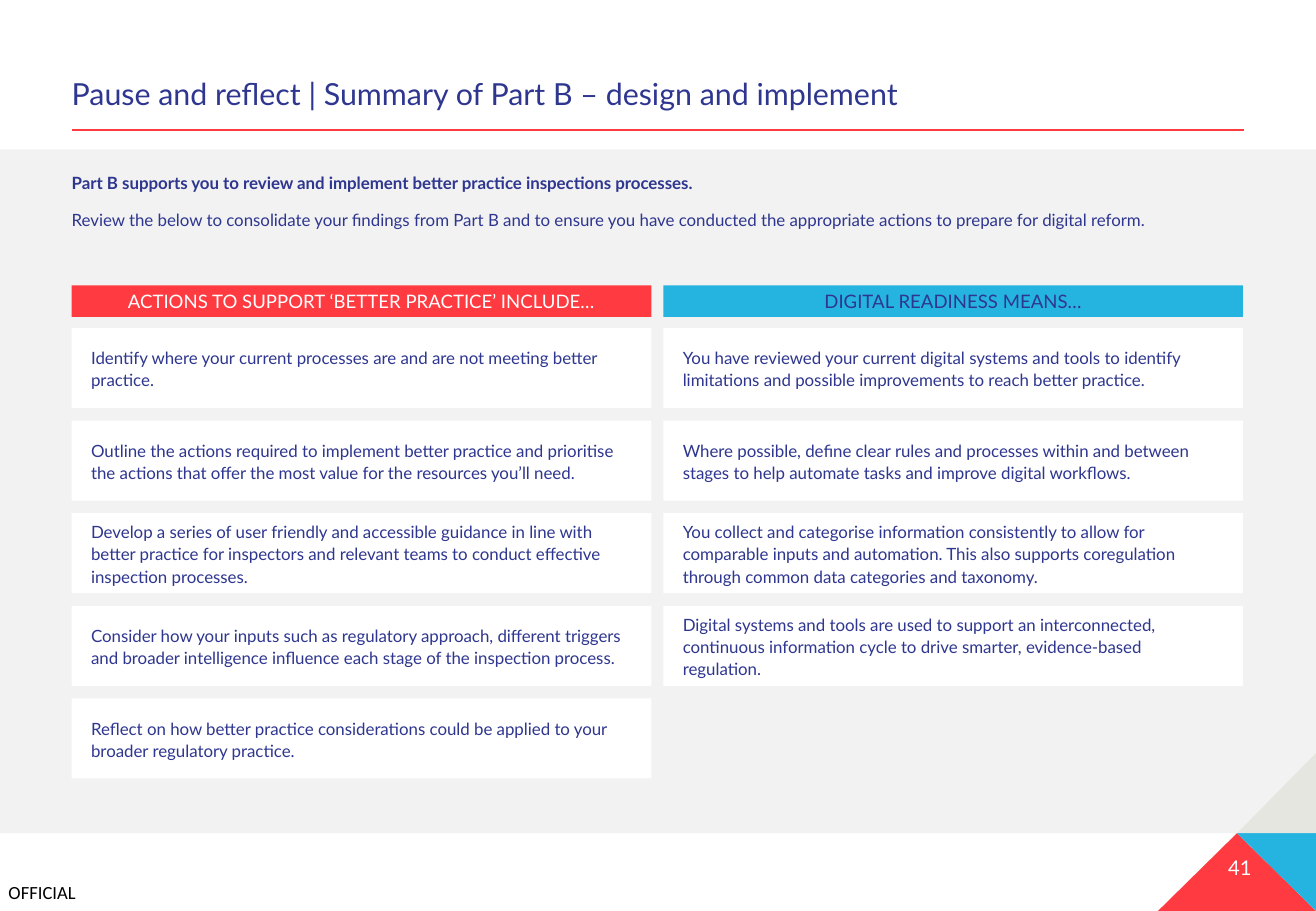
from lxml import etree
from pptx import Presentation
from pptx.dml.color import RGBColor
from pptx.enum.shapes import MSO_CONNECTOR, MSO_SHAPE
from pptx.enum.text import MSO_ANCHOR, PP_ALIGN
from pptx.oxml.ns import qn
from pptx.util import Inches, Pt

RECT = MSO_SHAPE.RECTANGLE
STRAIGHT = MSO_CONNECTOR.STRAIGHT
TOP, MIDDLE, BOTTOM = MSO_ANCHOR.TOP, MSO_ANCHOR.MIDDLE, MSO_ANCHOR.BOTTOM
LEFT, CENTER, RIGHT = PP_ALIGN.LEFT, PP_ALIGN.CENTER, PP_ALIGN.RIGHT
NAVY, RED, BLUE = "2E368F", "FF3A40", "25B3E0"
WHITE, GREY, STONE, BLACK = "FFFFFF", "F2F2F2", "E6E6E1", "000000"


def paint(sp, color):
    sp.shadow.inherit = False
    sp.fill.solid()
    sp.fill.fore_color.rgb = RGBColor.from_string(color)
    sp.line.fill.background()


def write(sp, lines, size, color=NAVY, font="Lato", align=LEFT, anchor=TOP,
          inset=(0, 0.05), spacing=1.0):
    """Fill a shape with paragraphs given as (text, bold) pairs."""
    tf = sp.text_frame
    tf.word_wrap = True
    tf.vertical_anchor = anchor
    tf.margin_left = tf.margin_right = Inches(inset[0])
    tf.margin_top = tf.margin_bottom = Inches(inset[1])
    for i, (text, bold) in enumerate(lines):
        p = tf.add_paragraph() if i else tf.paragraphs[0]
        p.alignment = align
        p.line_spacing = spacing
        if i:
            p.space_before = Pt(4)
        if i < len(lines) - 1:
            p.space_after = Pt(6)
        r = p.add_run()
        r.text = text
        r.font.name = font
        r.font.size = Pt(size)
        r.font.bold = bold
        r.font.color.rgb = RGBColor.from_string(color)


prs = Presentation()
prs.slide_width, prs.slide_height = Inches(10.83), Inches(7.5)
s = prs.slides.add_slide(prs.slide_layouts[6])

# Grey panel
panel = s.shapes.add_shape(RECT, 0, Inches(1.23), prs.slide_width, Inches(5.63))
paint(panel, GREY)

# Corner triangles
triangles = [
    (RED, [(10.18, 6.86), (9.53, 7.5), (10.83, 7.5)]),
    (BLUE, [(10.83, 6.86), (10.18, 6.86), (10.83, 7.5)]),
    (STONE, [(10.83, 6.2), (10.18, 6.86), (10.83, 6.86)]),
]
for color, points in triangles:
    corners = [(Inches(x), Inches(y)) for x, y in points]
    builder = s.shapes.build_freeform(*corners[0])
    builder.add_line_segments(corners[1:], close=True)
    paint(builder.convert_to_shape(), color)

# Title rule
rule = s.shapes.add_connector(STRAIGHT, Inches(0.59), Inches(1.07),
                              Inches(10.24), Inches(1.07))
rule.line.color.rgb = RGBColor.from_string(RED)
rule.line.width = Pt(1.25)
etree.SubElement(rule.line._get_or_add_ln().getparent(), qn("a:effectLst"))

# Title, introduction, page number and marking
texts = [
    ((0.59, 0.59, 9.65, 0.38),
     [("Pause and reflect | Summary of Part B – design and implement", False)],
     dict(size=18, anchor=BOTTOM, spacing=0.9)),
    ((0.59, 1.37, 9.65, 0.81),
     [("Part B supports you to review and implement better practice inspections processes.", True),
      ("Review the below to consolidate your findings from Part B and to ensure you have "
       "conducted the appropriate actions to prepare for digital reform.", False)],
     dict(size=10)),
    ((9.43, 6.99, 0.87, 0.3), [("41", False)],
     dict(size=12, color=WHITE, align=RIGHT)),
    ((0.07, 7.25, 0.7, 0.18), [("OFFICIAL", False)],
     dict(size=11, color=BLACK, font="Calibri", inset=(0, 0))),
]
for box, lines, style in texts:
    write(s.shapes.add_textbox(*map(Inches, box)), lines, **style)

# Two columns of cards under coloured headings
columns = [
    (0.59, "ACTIONS TO SUPPORT ‘BETTER PRACTICE’ INCLUDE…", RED, WHITE, [
        "Identify where your current processes are and are not meeting better practice.",
        "Outline the actions required to implement better practice and prioritise the actions "
        "that offer the most value for the resources you’ll need.",
        "Develop a series of user friendly and accessible guidance in line with better practice "
        "for inspectors and relevant teams to conduct effective inspection processes.",
        "Consider how your inputs such as regulatory approach, different triggers and broader "
        "intelligence influence each stage of the inspection process.",
        "Reflect on how better practice considerations could be applied to your broader "
        "regulatory practice.",
    ]),
    (5.46, "DIGITAL READINESS MEANS…", BLUE, NAVY, [
        "You have reviewed your current digital systems and tools to identify limitations and "
        "possible improvements to reach better practice.",
        "Where possible, define clear rules and processes within and between stages to help "
        "automate tasks and improve digital workflows.",
        "You collect and categorise information consistently to allow for comparable inputs and "
        "automation. This also supports coregulation through common data categories and taxonomy.",
        "Digital systems and tools are used to support an interconnected, continuous information "
        "cycle to drive smarter, evidence-based regulation.",
    ]),
]
first_top, last_top = 2.7, 5.75
pitch = (last_top - first_top) / 4
for left, heading, fill, color, cards in columns:
    sp = s.shapes.add_shape(RECT, Inches(left), Inches(2.35), Inches(4.77), Inches(0.26))
    paint(sp, fill)
    write(sp, [(heading, False)], 11, color, align=CENTER, anchor=MIDDLE, inset=(0.1, 0.05))
    for row, card in enumerate(cards):
        sp = s.shapes.add_shape(RECT, Inches(left), Inches(first_top + row * pitch),
                                Inches(4.77), Inches(0.66))
        paint(sp, WHITE)
        write(sp, [(card, False)], 10, anchor=MIDDLE, inset=(0.16, 0.05), spacing=1.1)

prs.save("out.pptx")
